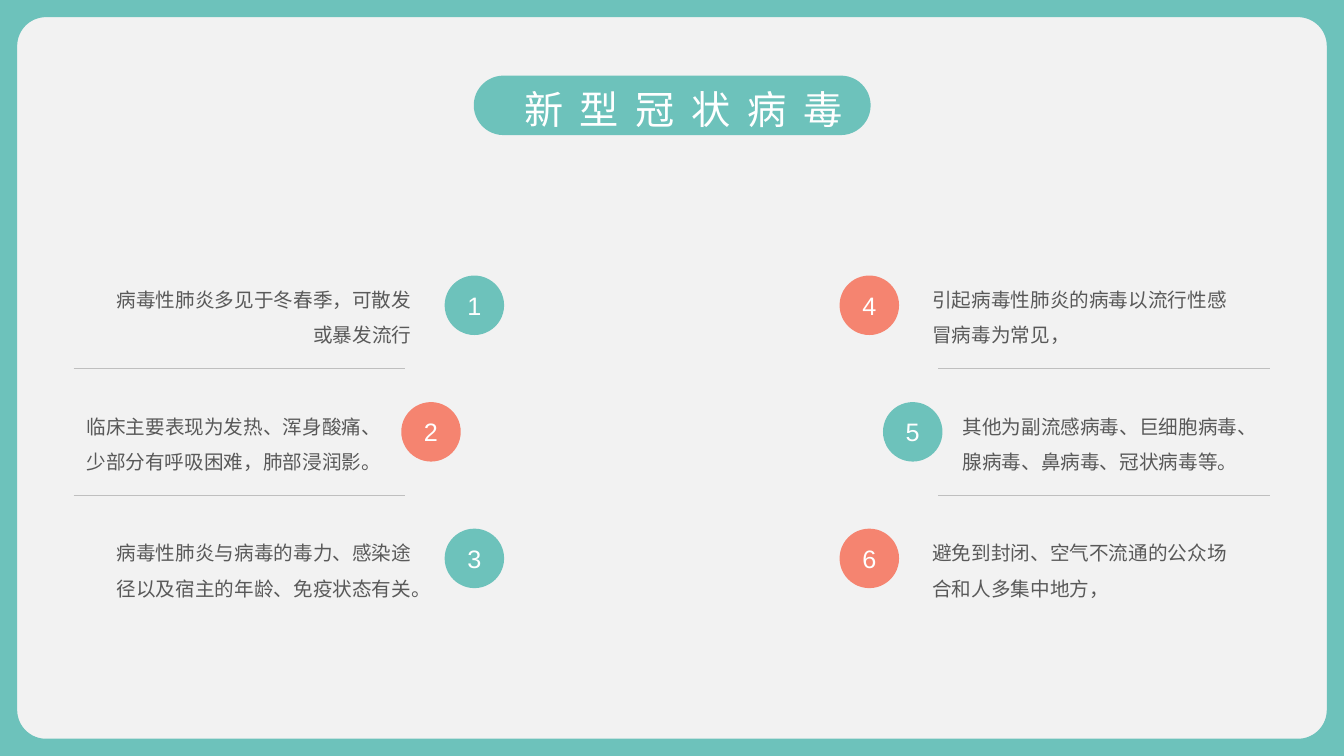
import math

from lxml import etree
from pptx import Presentation
from pptx.dml.color import RGBColor
from pptx.enum import shapes as kinds, text as txt
from pptx.oxml import ns
from pptx.util import Pt

TEAL = RGBColor(0x6D, 0xC2, 0xBB)
CORAL = RGBColor(0xF5, 0x84, 0x70)
PALE = RGBColor(0xF2, 0xF2, 0xF2)
WHITE = RGBColor(0xFF, 0xFF, 0xFF)
GREY = RGBColor(0x59, 0x59, 0x59)
RULE = RGBColor(0xBF, 0xBF, 0xBF)

WIDE, HIGH = 960, 540
ALIGN = txt.PP_ALIGN
SHAPE = kinds.MSO_SHAPE
LEFT = ["病毒性肺炎多见于冬春季，可散发或暴发流行",
        "临床主要表现为发热、浑身酸痛、少部分有呼吸困难，肺部浸润影。",
        "病毒性肺炎与病毒的毒力、感染途径以及宿主的年龄、免疫状态有关。"]
RIGHT = ["引起病毒性肺炎的病毒以流行性感冒病毒为常见，",
         "其他为副流感病毒、巨细胞病毒、腺病毒、鼻病毒、冠状病毒等。",
         "避免到封闭、空气不流通的公众场合和人多集中地方，"]


def paint(shape, color):
    shape.shadow.inherit = False
    shape.fill.solid()
    shape.fill.fore_color.rgb = color
    shape.line.fill.background()


def write(shape, words, size, color, align, lead=1.0, gap=0):
    """Put one paragraph in a shape; gap is the letter spacing in points."""
    shape.text_frame.word_wrap = True
    para = shape.text_frame.paragraphs[0]
    para.alignment, para.line_spacing = align, lead
    run = para.add_run()
    run.text = words
    for key, value in {"size": Pt(size), "name": "Arial"}.items():
        setattr(run.font, key, value)
    run.font.color.rgb = color
    for key, value in {"lang": "zh-CN", "spc": str(gap * 100)}.items():
        run._r.get_or_add_rPr().set(key, value)


def add_frame(slide, x, y, w, h, edge=12.3, bend=20.5):
    """Draw a border whose inner outline has round corners."""
    inset = edge + bend
    turns = [(x + w - inset, y + h - inset, 0), (x + inset, y + h - inset, 90),
             (x + inset, y + inset, 180), (x + w - inset, y + inset, 270)]
    hole = [(cx + bend * math.cos(math.radians(start + step)),
             cy + bend * math.sin(math.radians(start + step)))
            for cx, cy, start in turns for step in range(0, 91, 5)]
    pen = slide.shapes.build_freeform(Pt(x), Pt(y))
    pen.add_line_segments([(Pt(x + w), Pt(y)), (Pt(x + w), Pt(y + h)), (Pt(x), Pt(y + h))])
    pen.move_to(*map(Pt, hole[0]))
    pen.add_line_segments([tuple(map(Pt, spot)) for spot in hole[1:]])
    paint(pen.convert_to_shape(), TEAL)


def add_title(slide, x, y, w, h):
    pill = slide.shapes.add_shape(SHAPE.ROUNDED_RECTANGLE, Pt(x), Pt(y), Pt(w), Pt(h))
    pill.adjustments[0] = 0.5
    paint(pill, TEAL)
    label = slide.shapes.add_textbox(Pt(x - 30.2), Pt(y + 3.6), Pt(360), Pt(38.9))
    write(label, "新型冠状病毒", 28, WHITE, ALIGN.CENTER, gap=12)
    label.text_frame.auto_size = txt.MSO_AUTO_SIZE.SHAPE_TO_FIT_TEXT


def add_rule(slide, start, end, y):
    line = slide.shapes.add_connector(
        kinds.MSO_CONNECTOR.STRAIGHT, Pt(start), Pt(y), Pt(end), Pt(y))
    line.line.width = Pt(0.25)
    line.line.color.rgb = RULE
    etree.SubElement(line._element.spPr, ns.qn("a:effectLst"))


def add_list(slide, x, y, w, notes, first, colors, flip=False):
    """Stack numbered notes in a column; flip mirrors it left to right."""
    step, ball, body, rule = 90.4, 42.5, 226.8, 236.9

    def place(left, width):
        return x + (w - left - width if flip else left)

    for row, note in enumerate(notes):
        top, middle = y + row * step, row % 2
        box = slide.shapes.add_textbox(
            Pt(place(0 if middle else 21.6, body)), Pt(top), Pt(body), Pt(41.8))
        write(box, note, 14, GREY, ALIGN.LEFT if flip else ALIGN.RIGHT, lead=1.5)
        disc = slide.shapes.add_shape(
            SHAPE.OVAL, Pt(place(234 if middle else 265, ball)), Pt(top + 3), Pt(ball), Pt(ball))
        paint(disc, colors[middle])
        disc.text_frame.vertical_anchor = txt.MSO_ANCHOR.MIDDLE
        write(disc, str(first + row), 18, WHITE, ALIGN.CENTER)
        if row < len(notes) - 1:
            start = place(0, rule)
            add_rule(slide, start, start + rule, top + 69.4)


def main():
    deck = Presentation()
    deck.slide_width, deck.slide_height = Pt(WIDE), Pt(HIGH)
    slide = deck.slides.add_slide(deck.slide_layouts[6])
    slide.background.fill.solid()
    slide.background.fill.fore_color.rgb = PALE
    add_frame(slide, 0, 0, WIDE, HIGH)
    add_title(slide, 338.4, 54, 283.5, 42.5)
    add_list(slide, 52.6, 193.8, 307.4, LEFT, 1, (TEAL, CORAL))
    add_list(slide, 599.8, 193.8, 307.4, RIGHT, 4, (CORAL, TEAL), flip=True)
    deck.save("out.pptx")


if __name__ == "__main__":
    main()
